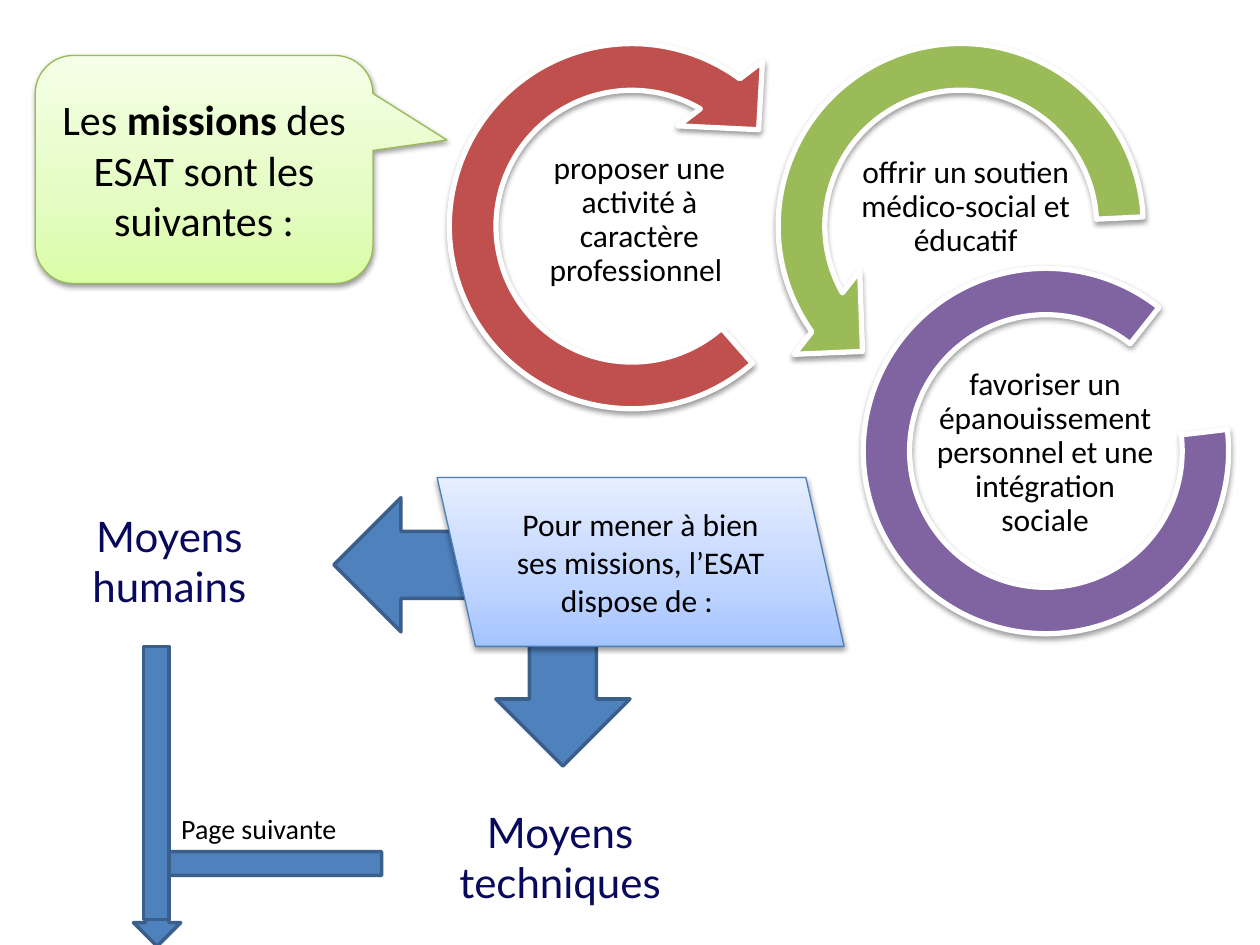
from copy import deepcopy
from dataclasses import dataclass

from lxml import etree
from pptx import Presentation
from pptx.dml.color import RGBColor
from pptx.enum.shapes import MSO_SHAPE
from pptx.enum.text import MSO_ANCHOR, MSO_AUTO_SIZE, PP_ALIGN
from pptx.oxml.ns import qn
from pptx.util import Inches, Pt

CENTER, LEFT = PP_ALIGN.CENTER, PP_ALIGN.LEFT
TOP, MIDDLE = MSO_ANCHOR.TOP, MSO_ANCHOR.MIDDLE
COLS, ROWS = 100, 75
CELL = Inches(0.1)
BLANK_LAYOUT = 6


@dataclass(frozen=True)
class Theme:
    body_font: str = "Calibri"
    label_font: str = "Lato"
    large: int = 24
    medium: int = 18
    small: int = 16
    black: str = "000000"
    white: str = "FFFFFF"
    navy: str = "08095C"
    red: str = "C0504D"
    green: str = "9BBB59"
    purple: str = "8064A2"
    blue: str = "4F81BD"
    blue_line: str = "3A5F8C"
    lime_line: str = "98B955"
    sky_line: str = "4B7EBC"
    # Gradients run from bottom to top
    lime: tuple = ("DAFDA7", "E4FCC2", "F5FFE7")
    sky: tuple = ("A4C4FF", "BFD4FF", "E6EEFF")
    stops: tuple = (0, 0.35, 1)


T = Theme()


@dataclass(frozen=True)
class Box:
    """Place and size in columns and rows of the slide grid."""
    col: float
    row: float
    cols: float
    rows: float

    def emu(self) -> list[int]:
        return [round(v * CELL) for v in (self.col, self.row, self.cols, self.rows)]


@dataclass(frozen=True)
class Figure:
    kind: int
    box: Box
    fill: str | tuple
    line: str
    width: float
    adj: tuple = ()
    rot: float = 0
    flip: str = ""
    shadow: bool = False


@dataclass(frozen=True)
class Label:
    """Text in which the parts between asterisks are bold."""
    text: str
    size: int
    font: str = T.body_font
    color: str = T.black
    align: int = CENTER
    anchor: int = MIDDLE
    spacing: float = 1.0


@dataclass(frozen=True)
class Mission:
    ring: Figure
    text_box: Box
    text: str


def ring(kind: int, box: Box, color: str, adj: tuple, rot: float) -> Figure:
    return Figure(kind, box, color, T.white, 3, adj, rot, shadow=True)


def arrow(kind: int, box: Box, rot: float = 0, flip: str = "") -> Figure:
    return Figure(kind, box, T.blue, T.blue_line, 2, rot=rot, flip=flip)


def add_shadow(sp) -> None:
    lst = sp._element.spPr.find(qn("a:effectLst"))
    shadow = etree.SubElement(lst, qn("a:outerShdw"), blurRad="40000", dist="20000",
                              dir="5400000", rotWithShape="0")
    color = etree.SubElement(shadow, qn("a:srgbClr"), val=T.black)
    etree.SubElement(color, qn("a:alpha"), val="38000")


def fill_gradient(sp, colors: tuple) -> None:
    sp.fill.gradient()
    sp.fill.gradient_angle = 90
    stops = sp._element.spPr.find(".//" + qn("a:gsLst"))
    stops.insert(1, deepcopy(stops[0]))
    for stop, color, position in zip(sp.fill.gradient_stops, colors, T.stops):
        stop.color.rgb = RGBColor.from_string(color)
        stop.position = position


def add_figure(shapes, f: Figure):
    sp = shapes.add_shape(f.kind, *f.box.emu())
    sp.rotation = f.rot
    for i, value in enumerate(f.adj):
        sp.adjustments[i] = value
    for axis in f.flip:
        sp._element.spPr.xfrm.set("flip" + axis, "1")
    if isinstance(f.fill, tuple):
        fill_gradient(sp, f.fill)
    else:
        sp.fill.solid()
        sp.fill.fore_color.rgb = RGBColor.from_string(f.fill)
    sp.line.color.rgb = RGBColor.from_string(f.line)
    sp.line.width = Pt(f.width)
    sp.shadow.inherit = False
    if f.shadow:
        add_shadow(sp)
    return sp


def write(sp, label: Label) -> None:
    tf = sp.text_frame
    tf.word_wrap = True
    tf.vertical_anchor = label.anchor
    p = tf.paragraphs[0]
    p.alignment = label.align
    p.line_spacing = label.spacing
    for i, part in enumerate(label.text.split("*")):
        r = p.add_run()
        r.text = part
        r.font.bold = i % 2 == 1
        r.font.name = label.font
        r.font.size = Pt(label.size)
        r.font.color.rgb = RGBColor.from_string(label.color)


def add_text(shapes, box: Box, label: Label):
    sp = shapes.add_textbox(*box.emu())
    write(sp, label)
    return sp


def add_missions(s, missions: list[Mission]) -> None:
    group = s.shapes.add_group_shape()
    for m in missions:
        add_figure(group.shapes, m.ring)
        tf = add_text(group.shapes, m.text_box, Label(m.text, T.medium, spacing=0.9)).text_frame
        tf.margin_left = tf.margin_right = tf.margin_top = tf.margin_bottom = Inches(0.01)


MISSIONS = [
    Mission(ring(MSO_SHAPE.CIRCULAR_ARROW, Box(33.3, 1.1, 33.7, 33.7), T.red,
                 (0.11, 11.42, 45, 108, 0.125), 228.7),
            Box(41.2, 8.5, 19.1, 18), "proposer une activité à caractère professionnel "),
    Mission(ring(MSO_SHAPE.LEFT_CIRCULAR_ARROW, Box(59.4, 1.1, 33.7, 33.7), T.green,
                 (0.11, 11.42, 63, 189, 0.125), 42.1),
            Box(67.3, 9.2, 18.7, 14.5), "offrir un soutien médico-social et éducatif"),
    Mission(ring(MSO_SHAPE.BLOCK_ARC, Box(68.5, 21.3, 29, 29), T.purple,
                 (135, 108, 0.127), 128.2),
            Box(73.6, 28.1, 18.7, 15.7),
            "favoriser un épanouissement personnel et une intégration sociale"),
]
CALLOUT = Figure(MSO_SHAPE.ROUNDED_RECTANGULAR_CALLOUT, Box(2.8, 4.4, 26.8, 18.1), T.lime,
                 T.lime_line, 0.75, (0.719, -0.129, 0.167), shadow=True)
MEANS = Figure(MSO_SHAPE.PARALLELOGRAM, Box(34.7, 37.9, 32.3, 13.4), T.sky,
               T.sky_line, 0.75, (0.227,), flip="H", shadow=True)
MEANS_ARROW = arrow(MSO_SHAPE.LEFT_UP_ARROW, Box(27.6, 38.4, 21.3, 23.5), rot=270)
NEXT_ARROWS = [
    arrow(MSO_SHAPE.BENT_UP_ARROW, Box(10.6, 67.6, 19.7, 7.5), flip="HV"),
    arrow(MSO_SHAPE.RECTANGLE, Box(11.4, 51.3, 2, 21.7)),
]
MEANS_LABELS = [
    (Box(2.8, 40, 21.3, 9.1), "Moyens humains"),
    (Box(29.5, 63.5, 29.9, 9.1), "Moyens techniques"),
]


def main() -> None:
    prs = Presentation()
    prs.slide_width, prs.slide_height = COLS * CELL, ROWS * CELL
    s = prs.slides.add_slide(prs.slide_layouts[BLANK_LAYOUT])

    # Missions: three rings and the callout that introduces them
    add_missions(s, MISSIONS)
    write(add_figure(s.shapes, CALLOUT),
          Label("Les *missions* des ESAT sont les suivantes :", T.large))

    # Means: arrow behind its panel, then the two labels
    add_figure(s.shapes, MEANS_ARROW)
    write(add_figure(s.shapes, MEANS),
          Label("Pour mener à bien ses missions, l’ESAT dispose de : ", T.medium))
    for box, text in MEANS_LABELS:
        sp = add_text(s.shapes, box, Label(text, T.large, T.label_font, T.navy, anchor=TOP))
        sp.text_frame.auto_size = MSO_AUTO_SIZE.SHAPE_TO_FIT_TEXT

    # Pointer to the next page
    for figure in NEXT_ARROWS:
        add_figure(s.shapes, figure)
    sp = add_text(s.shapes, Box(13.4, 63.9, 15.7, 3.7),
                  Label("Page suivante", T.small, align=LEFT, anchor=TOP))
    sp.text_frame.auto_size = MSO_AUTO_SIZE.SHAPE_TO_FIT_TEXT

    prs.save("out.pptx")


if __name__ == "__main__":
    main()
